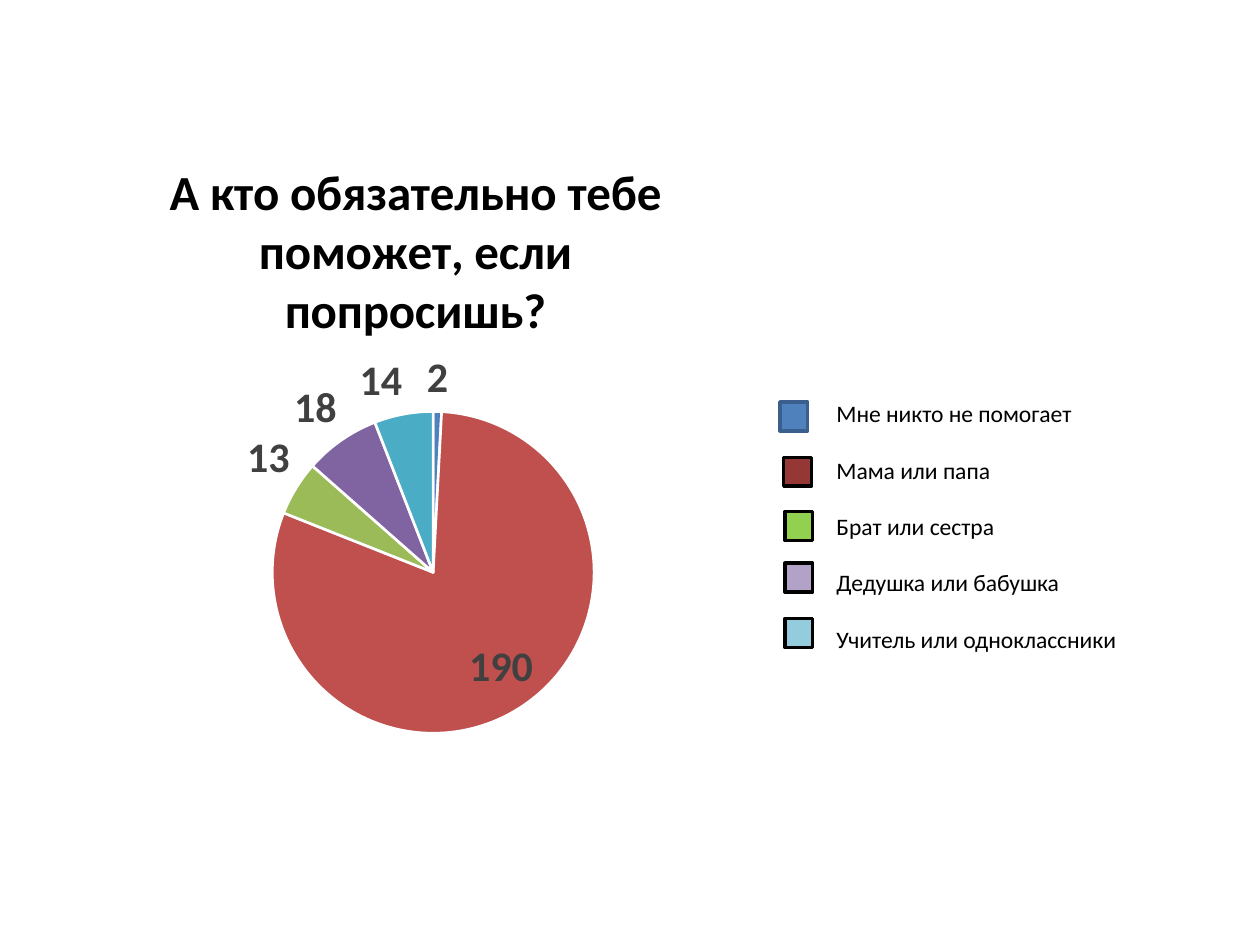
from dataclasses import dataclass
from lxml.etree import SubElement
from pptx import Presentation
from pptx.chart.data import CategoryChartData
from pptx.dml.color import RGBColor
from pptx.enum.chart import XL_CHART_TYPE, XL_LABEL_POSITION
from pptx.enum.shapes import MSO_SHAPE
from pptx.enum.text import MSO_AUTO_SIZE
from pptx.oxml.ns import qn
from pptx.util import Inches, Pt


@dataclass(frozen=True)
class Theme:
    font: str = "Calibri"
    black: str = "000000"
    label: str = "404040"
    white: str = "FFFFFF"
    title_size: float = 28
    label_size: float = 24
    legend_size: float = 13.5
    chart_size: float = 10


THEME = Theme()
QUESTION = "А кто обязательно тебе поможет, если попросишь?"
VOTES = [
    (2, "4F81BD"),
    (190, "C0504D"),
    (13, "9BBB59"),
    (18, "8064A2"),
    (14, "4BACC6"),
]
LEGEND = [
    ("Мне никто не помогает", 6.19, 3.19, "4F81BD", "3A5F8C"),
    ("Мама или папа", 6.22, 3.63, "953735", THEME.black),
    ("Брат или сестра", 6.23, 4.06, "92D050", THEME.black),
    ("Дедушка или бабушка", 6.23, 4.47, "B3A2C7", THEME.black),
    ("Учитель или одноклассники", 6.23, 4.91, "93CDDD", THEME.black),
]


def set_font(font, size, color, bold=False):
    font.name = THEME.font
    font.size = Pt(size)
    font.bold = bold
    font.color.rgb = RGBColor.from_string(color)


def place(layout, inner=False, **fractions):
    manual = SubElement(layout, qn("c:manualLayout"))
    if inner:
        SubElement(manual, qn("c:layoutTarget")).set("val", "inner")
    for axis in "xy":
        SubElement(manual, qn(f"c:{axis}Mode")).set("val", "edge")
    for name, value in fractions.items():
        SubElement(manual, qn(f"c:{name}")).set("val", str(value))


def get_layout(parent):
    layout = parent.find(qn("c:layout"))
    if layout is None:
        layout = SubElement(parent, qn("c:layout"))
        if parent.tag == qn("c:plotArea"):
            parent.insert(0, layout)
        else:
            parent.find(qn("c:tx")).addnext(layout)
    return layout


def add_pie(s):
    data = CategoryChartData()
    data.categories = [str(i + 1) for i in range(len(VOTES))]
    data.add_series("Series 1", [votes for votes, _ in VOTES])
    chart = s.shapes.add_chart(
        XL_CHART_TYPE.PIE, Inches(0.64), Inches(0.99), Inches(5.3), Inches(4.98), data
    ).chart
    set_font(chart.font, THEME.chart_size, THEME.black)
    chart.has_legend = False
    chart.has_title = True
    p = chart.chart_title.text_frame.paragraphs[0]
    p.text = QUESTION
    set_font(p.runs[0].font, THEME.title_size, THEME.black, True)
    title = chart.chart_title._element
    place(get_layout(title), x=0.12, y=0.04)
    plot_area = title.getparent().find(qn("c:plotArea"))
    place(get_layout(plot_area), inner=True, x=0.287, y=0.456, w=0.482, h=0.515)

    plot = chart.plots[0]
    plot.vary_by_categories = True
    for i, (_, color) in enumerate(VOTES):
        fmt = plot.series[0].points[i].format
        fmt.fill.solid()
        fmt.fill.fore_color.rgb = RGBColor.from_string(color)
        fmt.line.color.rgb = RGBColor.from_string(THEME.white)
        fmt.line.width = Pt(1.5)
    labels = plot.series[0].data_labels
    labels.show_value = True
    labels.show_percentage = False
    labels.position = XL_LABEL_POSITION.BEST_FIT
    set_font(labels.font, THEME.label_size, THEME.label, True)


def add_swatch(s, left, top, fill, line):
    sp = s.shapes.add_shape(
        MSO_SHAPE.RECTANGLE, Inches(left), Inches(top), Inches(0.22), Inches(0.23)
    )
    sp.shadow.inherit = False
    sp.fill.solid()
    sp.fill.fore_color.rgb = RGBColor.from_string(fill)
    sp.line.color.rgb = RGBColor.from_string(line)
    sp.line.width = Pt(2)


def add_answers(s, answers):
    sp = s.shapes.add_textbox(Inches(6.54), Inches(3.12), Inches(2.45), Inches(2.15))
    tf = sp.text_frame
    tf.word_wrap = False
    tf.auto_size = MSO_AUTO_SIZE.SHAPE_TO_FIT_TEXT
    tf.text = "\n".join(answers)
    for i, p in enumerate(tf.paragraphs):
        if i:
            p.space_before = Pt(16)
        set_font(p.runs[0].font, THEME.legend_size, THEME.black)


def main():
    prs = Presentation()
    prs.slide_width, prs.slide_height = Inches(10), Inches(7.5)
    s = prs.slides.add_slide(prs.slide_layouts[6])
    add_pie(s)
    for _, left, top, fill, line in LEGEND:
        add_swatch(s, left, top, fill, line)
    add_answers(s, [answer for answer, *_ in LEGEND])
    prs.save("out.pptx")


if __name__ == "__main__":
    main()
